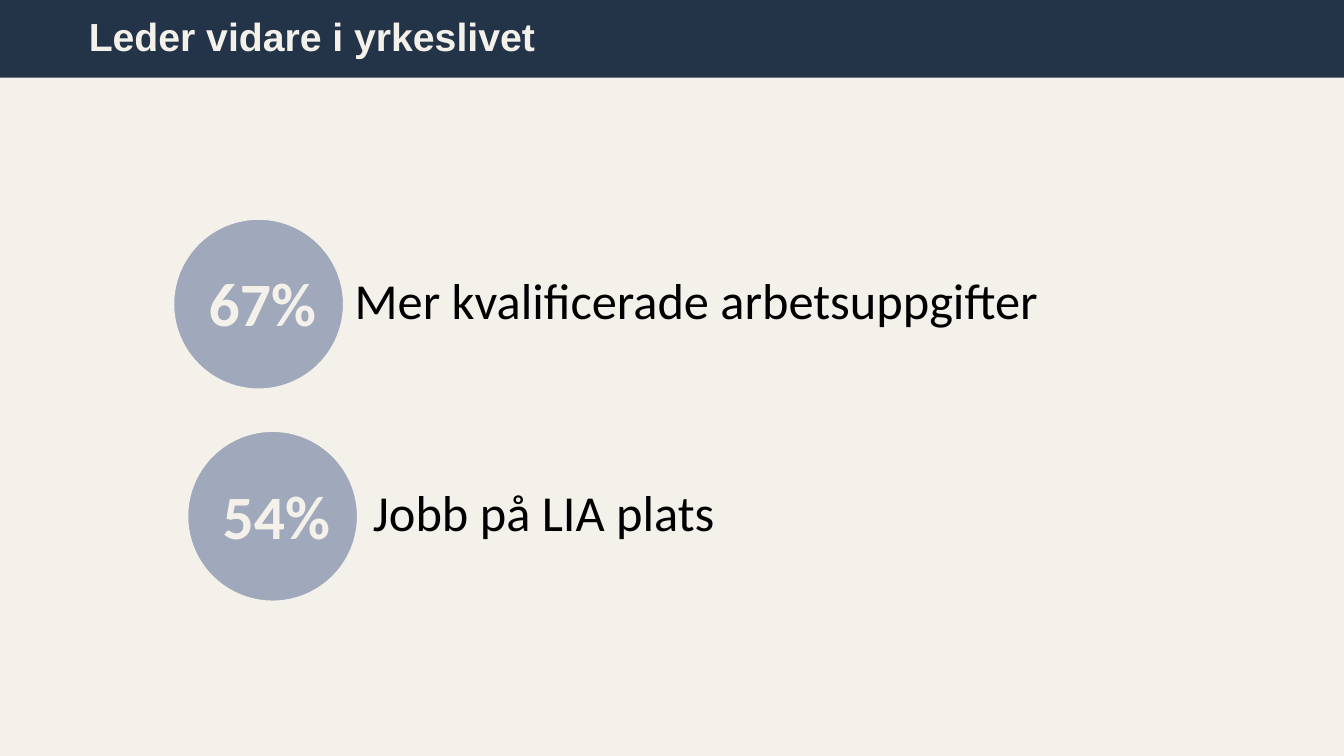
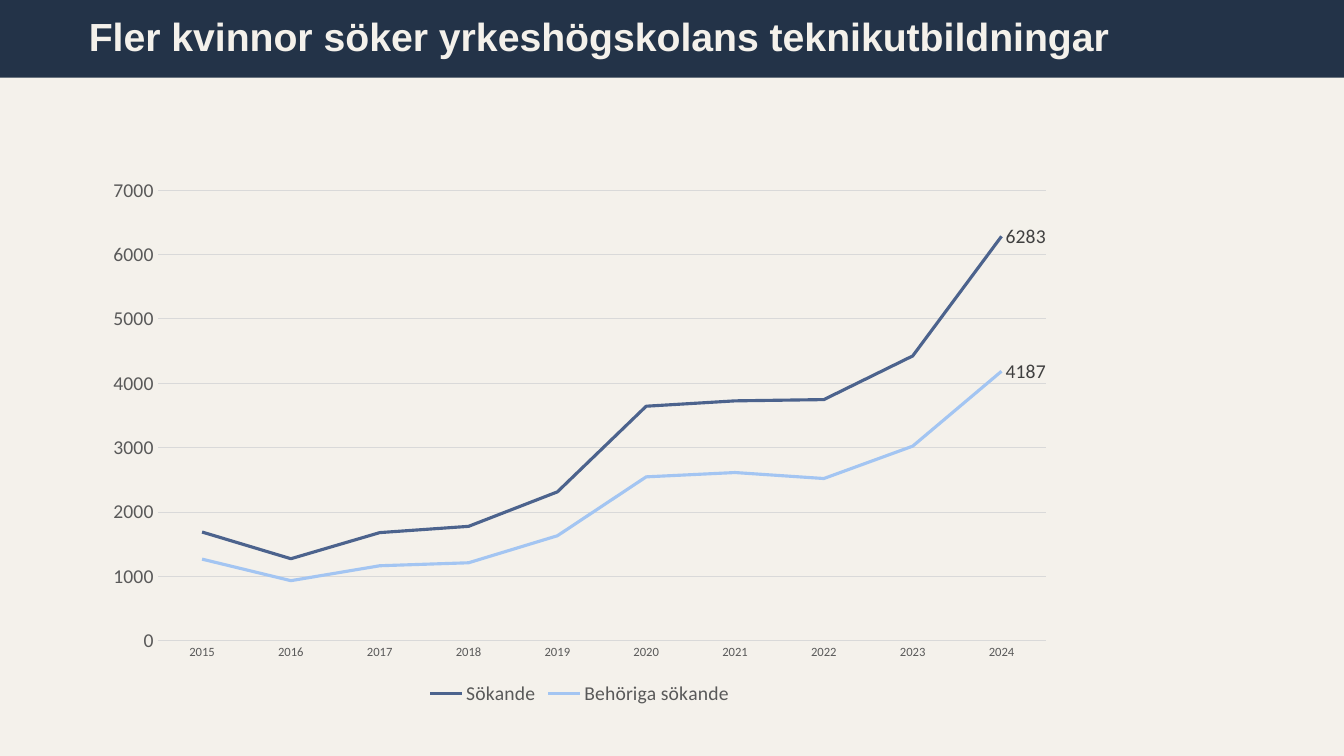
from lxml.etree import SubElement
from pptx import Presentation
from pptx.chart.data import CategoryChartData
from pptx.dml.color import RGBColor
from pptx.enum.chart import XL_CHART_TYPE, XL_LEGEND_POSITION, XL_LABEL_POSITION, XL_TICK_MARK
from pptx.enum.shapes import MSO_SHAPE
from pptx.enum.text import MSO_ANCHOR, PP_ALIGN
from pptx.oxml.ns import qn
from pptx.util import Pt

NAVY, CREAM, BLUE, LIGHT_BLUE = "233348", "F4F1EB", "4C638D", "A3C5F2"
BLACK, DARK_GREY, GREY, LIGHT_GREY = "000000", "404040", "595959", "D9D9D9"
SLIDE_WIDTH, SLIDE_HEIGHT = 960, 540


def set_color(color_format, value):
    color_format.rgb = RGBColor.from_string(value)


def write_text(shape, text, size, color, font="Calibri", bold=False, spacing=1.0,
               left=7.2, right=7.2, anchor=MSO_ANCHOR.MIDDLE):
    frame = shape.text_frame
    frame.word_wrap = True
    frame.vertical_anchor = anchor
    frame.margin_left, frame.margin_right = Pt(left), Pt(right)
    paragraph = frame.paragraphs[0]
    paragraph.text = text
    paragraph.alignment = PP_ALIGN.LEFT
    paragraph.line_spacing = spacing
    paragraph.font.name = font
    paragraph.font.size = Pt(size)
    paragraph.font.bold = bold
    set_color(paragraph.font.color, color)


presentation = Presentation()
presentation.slide_width, presentation.slide_height = Pt(SLIDE_WIDTH), Pt(SLIDE_HEIGHT)

# Shared background and title band
slides = []
for title in ("Leder vidare i yrkeslivet", "Fler kvinnor söker yrkeshögskolans teknikutbildningar"):
    slide = presentation.slides.add_slide(presentation.slide_layouts[6])
    slide.background.fill.solid()
    set_color(slide.background.fill.fore_color, CREAM)
    band = slide.shapes.add_shape(MSO_SHAPE.RECTANGLE, 0, 0, Pt(SLIDE_WIDTH), Pt(55.5))
    band.shadow.inherit = False
    band.fill.solid()
    set_color(band.fill.fore_color, NAVY)
    band.line.fill.background()
    write_text(band, title, 28, CREAM, font="Arial", bold=True, spacing=0.9, left=63.4)
    slides.append(slide)
outcome_slide, chart_slide = slides

# Outcomes: share in a circle, description to its right
DIAMETER = 121.5
outcomes = [
    ("67%", "Mer kvalificerade arbetsuppgifter", 124, 156.5, 253.4),
    ("54%", "Jobb på LIA plats", 134, 308, 266.4),
]
for share, description, left, top, text_left in outcomes:
    circle = outcome_slide.shapes.add_shape(
        MSO_SHAPE.OVAL, Pt(left), Pt(top), Pt(DIAMETER), Pt(DIAMETER))
    circle.shadow.inherit = False
    circle.fill.solid()
    set_color(circle.fill.fore_color, BLUE)
    fill_color = circle.fill._xPr.find(qn("a:solidFill"))[0]
    SubElement(fill_color, qn("a:alpha"), val="50000")
    set_color(circle.line.color, CREAM)
    circle.line.width = Pt(1)

    description_box = outcome_slide.shapes.add_textbox(
        Pt(text_left), Pt(top - 1), Pt(512), Pt(DIAMETER))
    write_text(description_box, description, 36, BLACK, spacing=0.9, left=0, right=0)
    share_box = outcome_slide.shapes.add_textbox(
        Pt(left + 18), Pt(top + 29.5), Pt(106.5), Pt(60.5))
    write_text(share_box, share, 44, CREAM, bold=True, anchor=MSO_ANCHOR.TOP)

# Line chart of applicants
series_table = [
    ("Sökande", BLUE, (1689, 1274, 1680, 1777, 2313, 3644, 3727, 3747, 4425, 6283)),
    ("Behöriga sökande", LIGHT_BLUE, (1268, 933, 1165, 1211, 1631, 2546, 2613, 2520, 3023, 4187)),
]
chart_data = CategoryChartData(number_format="0")
chart_data.categories = [str(year) for year in range(2015, 2025)]
for name, _, values in series_table:
    chart_data.add_series(name, values)
chart = chart_slide.shapes.add_chart(
    XL_CHART_TYPE.LINE, Pt(67), Pt(119.5), Pt(694), Pt(387.5), chart_data).chart
chart.has_title = False
chart.has_legend = True
chart.legend.position = XL_LEGEND_POSITION.BOTTOM
chart.legend.include_in_layout = False

# Axes
category_axis, value_axis = chart.category_axis, chart.value_axis
for axis in (category_axis, value_axis):
    axis.major_tick_mark = axis.minor_tick_mark = XL_TICK_MARK.NONE
value_axis.minimum_scale, value_axis.maximum_scale, value_axis.major_unit = 0, 7000, 1000
value_axis.tick_labels.number_format = "0"
value_axis.tick_labels.number_format_is_linked = False
value_axis.format.line.fill.background()
for line in (category_axis.format.line, value_axis.major_gridlines.format.line):
    set_color(line.color, LIGHT_GREY)
    line.width = Pt(0.75)

# Series, with the last point labelled
chart_fonts = [
    (chart.font, 10, BLACK),
    (chart.legend.font, 14, GREY),
    (category_axis.tick_labels.font, 9, GREY),
    (value_axis.tick_labels.font, 14, GREY),
]
for series, (_, color, values) in zip(chart.plots[0].series, series_table):
    series.smooth = False
    set_color(series.format.line.color, color)
    series.format.line.width = Pt(2.25)
    label = series.points[len(values) - 1].data_label
    chart_fonts.append((label.font, 14, DARK_GREY))
    label.position = XL_LABEL_POSITION.RIGHT
for font, size, color in chart_fonts:
    font.name = "Calibri"
    font.size = Pt(size)
    font.bold = False
    set_color(font.color, color)

presentation.save("out.pptx")
